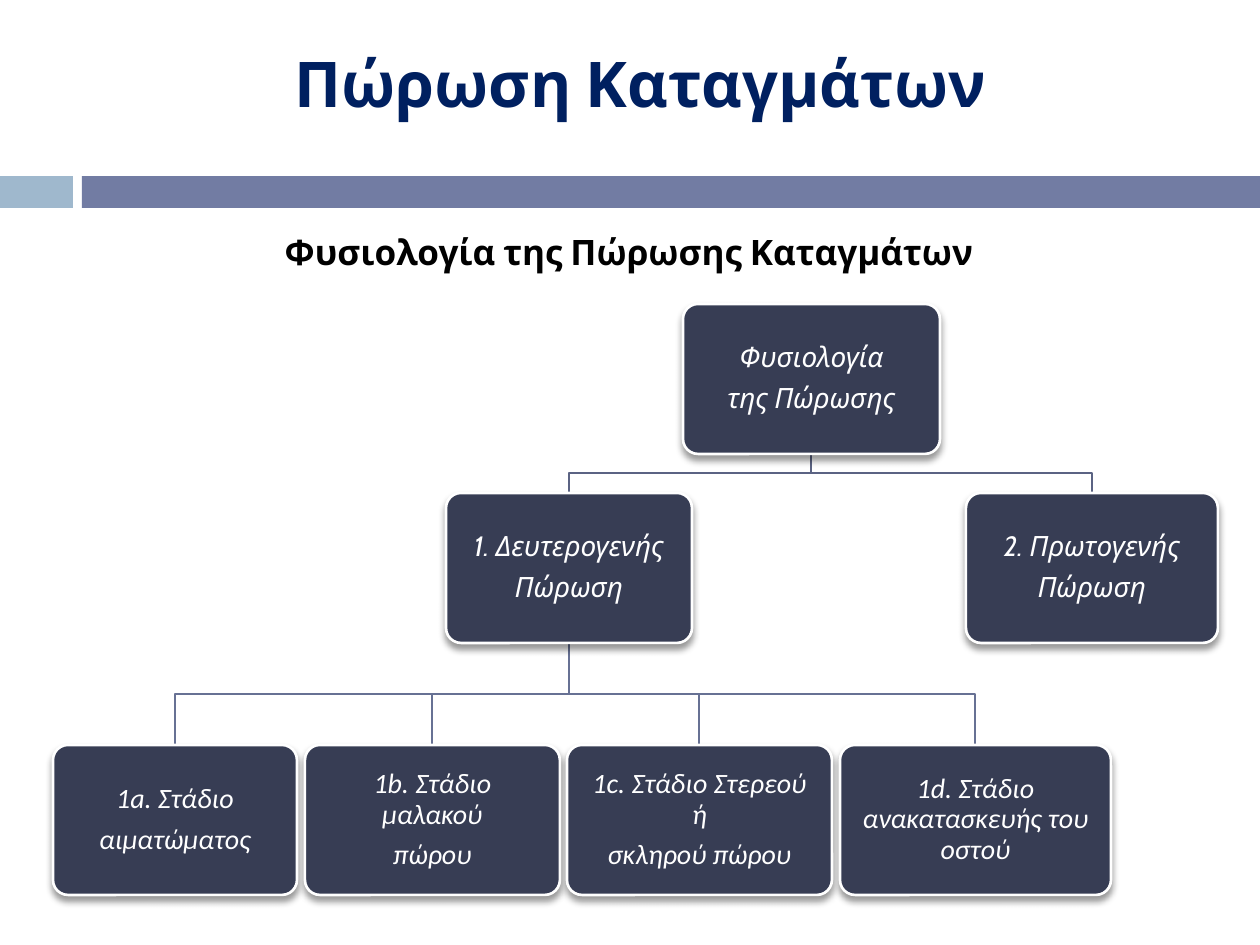
from lxml import etree
from pptx import Presentation
from pptx import util as u
from pptx.dml.color import RGBColor
from pptx.enum import shapes, text
from pptx.oxml.ns import qn

PX = 914400 // 126

# Content
TITLE = "Πώρωση Καταγμάτων"
SUBTITLE = "Φυσιολογία της Πώρωσης Καταγμάτων"
BANDS = [(0, 73, "9FB8CD"), (82, 1178, "727CA3")]  # left, width, colour
# key: lines, left, width, level
STAGES = {
    "root": (["Φυσιολογία", "της Πώρωσης"], 683, 257, 0),
    "1": (["1. Δευτερογενής", "Πώρωση"], 446, 246, 1),
    "2": (["2. Πρωτογενής", "Πώρωση"], 966, 252, 1),
    "1a": (["1a. Στάδιο", "αιματώματος"], 53, 244, 2),
    "1b": (["1b. Στάδιο μαλακού", "πώρου"], 305, 255, 2),
    "1c": (["1c. Στάδιο Στερεού ή", "σκληρού πώρου"], 567, 265, 2),
    "1d": (["1d. Στάδιο ανακατασκευής του οστού"], 840, 271, 2),
}
BRANCHES = {"root": ["2", "1"], "1": ["1a", "1b", "1c", "1d"]}
LEVEL_TOPS = [304, 493, 745]
LEVEL_FONTS = ["Cabin", "Cabin", "Calibri"]
BRANCH_COLOURS = ["5B6383", "677194"]
BOX_HEIGHT = 150


def px(*lengths):
    return [length * PX for length in lengths]


def colour(value):
    return RGBColor.from_string(value)


def style(paragraph, font, size, hex_colour, bold=False, italic=False):
    paragraph.alignment = text.PP_ALIGN.CENTER
    for run in paragraph.runs:
        run.font.name, run.font.size = font, u.Pt(size)
        run.font.bold, run.font.italic = bold, italic
        run.font.color.rgb = colour(hex_colour)


def fill_placeholder(holder, words, area, size, hex_colour):
    holder.left, holder.top, holder.width, holder.height = px(*area)
    frame = holder.text_frame
    frame.text = words
    frame.auto_size = text.MSO_AUTO_SIZE.NONE
    frame.vertical_anchor = text.MSO_ANCHOR.TOP
    heading = frame.paragraphs[0]
    heading.space_before = u.Pt(7)
    style(heading, "Cabin", size, hex_colour, bold=True)
    properties = heading._p.get_or_add_pPr()
    properties.set("marL", "0")
    properties.set("indent", "0")
    etree.SubElement(properties, qn("a:buNone"))


def add_soft_shadow(shape):
    effects = shape._element.spPr.find(qn("a:effectLst"))
    shadow = etree.SubElement(effects, qn("a:outerShdw"), blurRad=str(u.Pt(4)),
                              dist=str(u.Pt(3)), dir="5400000", rotWithShape="0")
    black = etree.SubElement(shadow, qn("a:srgbClr"), val="000000")
    etree.SubElement(black, qn("a:alpha"), val="40000")


def add_stage(slide, lines, left, width, level):
    box = slide.shapes.add_shape(shapes.MSO_SHAPE.ROUNDED_RECTANGLE,
                                 *px(left, LEVEL_TOPS[level], width, BOX_HEIGHT))
    box.adjustments[0] = 0.1
    box.fill.solid()
    box.fill.fore_color.rgb = colour("373D54")
    box.line.color.rgb = colour("FFFFFF")
    box.line.width = u.Pt(1.5)
    box.shadow.inherit = False
    add_soft_shadow(box)
    frame = box.text_frame
    frame.word_wrap = True
    frame.vertical_anchor = text.MSO_ANCHOR.MIDDLE
    frame.margin_left = frame.margin_right = 13 * PX
    frame.margin_top = frame.margin_bottom = 13 * PX
    frame.text = "\n".join(lines)
    for paragraph in frame.paragraphs:
        paragraph.line_spacing = 0.9
        paragraph.space_after = u.Pt(5.6)
        style(paragraph, LEVEL_FONTS[level], 16, "FFFFFF", italic=True)


def add_branch(slide, parent, child):
    (_, left, width, level), (_, child_left, child_width, child_level) = parent, child
    start_x, end_x = left + width // 2, child_left + child_width // 2
    start_y, end_y = LEVEL_TOPS[level] + BOX_HEIGHT, LEVEL_TOPS[child_level]
    middle = (start_y + end_y) // 2
    builder = slide.shapes.build_freeform(start_x, start_y, scale=PX)
    builder.add_line_segments([(start_x, middle), (end_x, middle), (end_x, end_y)],
                              close=False)
    branch = builder.convert_to_shape()
    branch.fill.background()
    branch.line.color.rgb = colour(BRANCH_COLOURS[level])
    branch.line.width = u.Pt(1.5)
    branch.shadow.inherit = False


def main():
    deck = Presentation()
    deck.slide_width, deck.slide_height = px(1260, 945)
    slide = deck.slides.add_slide(deck.slide_layouts[1])

    # Headings
    title, subtitle = slide.placeholders
    fill_placeholder(title, TITLE, (38, 38, 1205, 147), 36, "002060")
    fill_placeholder(subtitle, SUBTITLE, (118, 224, 1022, 49), 20, "000000")

    # Bands under the title
    for left, width, hex_colour in BANDS:
        band = slide.shapes.add_shape(shapes.MSO_SHAPE.RECTANGLE,
                                      *px(left, 176, width, 32))
        band.fill.solid()
        band.fill.fore_color.rgb = colour(hex_colour)
        band.line.fill.background()
        band.shadow.inherit = False

    # Tree: branches behind, stages in front
    for parent, children in BRANCHES.items():
        for child in children:
            add_branch(slide, STAGES[parent], STAGES[child])
    for stage in STAGES.values():
        add_stage(slide, *stage)

    deck.save("out.pptx")


if __name__ == "__main__":
    main()
